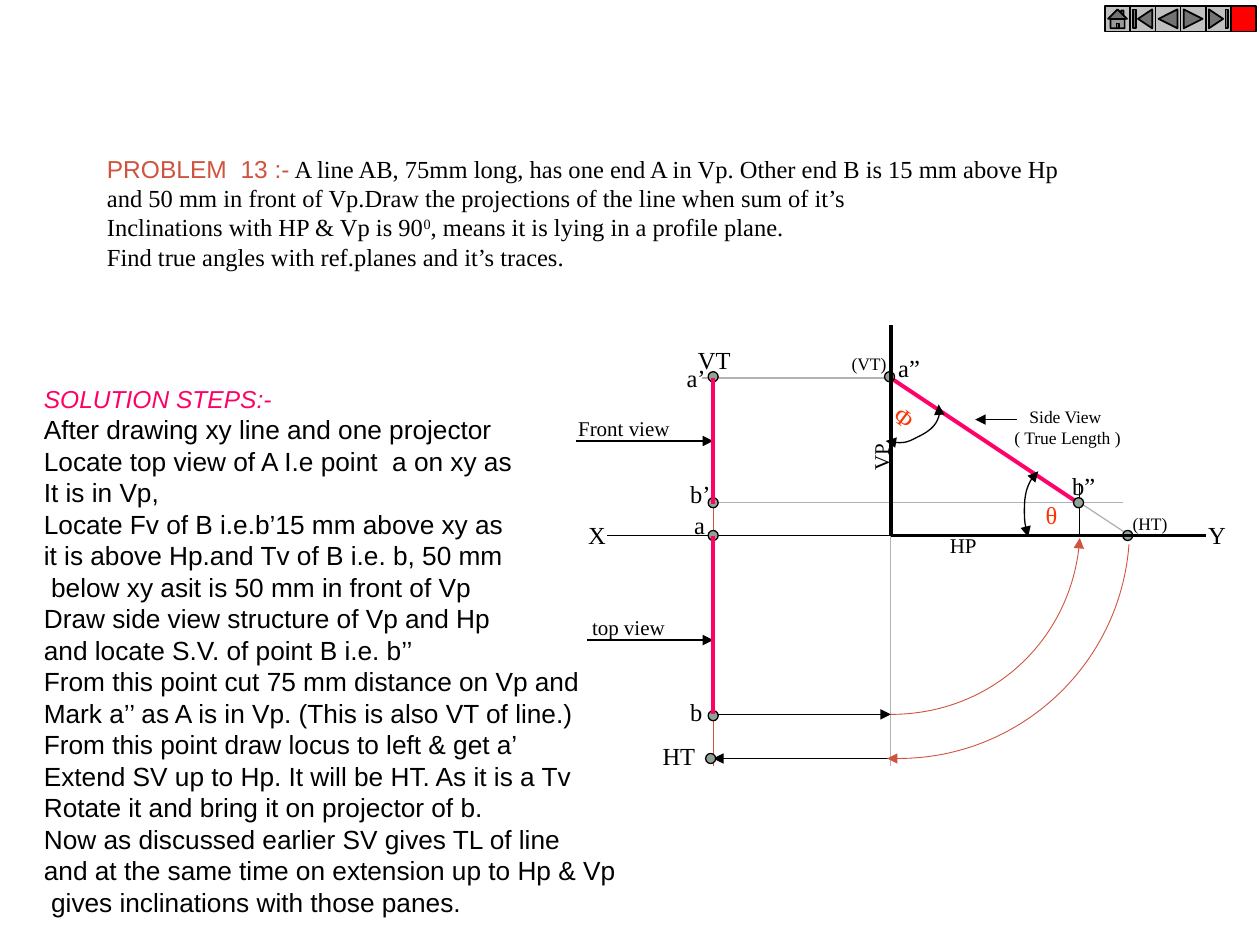
"""Build the slide on projecting a line that lies in a profile plane."""
from lxml import etree
from pptx import Presentation
from pptx.dml.color import RGBColor
from pptx.enum.shapes import MSO_CONNECTOR, MSO_SHAPE
from pptx.enum.text import MSO_AUTO_SIZE, PP_ALIGN
from pptx.oxml.ns import qn
from pptx.util import Inches, Pt

STRAIGHT = MSO_CONNECTOR.STRAIGHT
OVAL = MSO_SHAPE.OVAL
ROUNDED = MSO_SHAPE.ROUNDED_RECTANGLE
FIT = MSO_AUTO_SIZE.SHAPE_TO_FIT_TEXT
CENTER = PP_ALIGN.CENTER
BUTTONS = [
    MSO_SHAPE.ACTION_BUTTON_HOME,
    MSO_SHAPE.ACTION_BUTTON_BEGINNING,
    MSO_SHAPE.ACTION_BUTTON_BACK_OR_PREVIOUS,
    MSO_SHAPE.ACTION_BUTTON_FORWARD_OR_NEXT,
    MSO_SHAPE.ACTION_BUTTON_END,
    MSO_SHAPE.ACTION_BUTTON_CUSTOM,
]
SERIF, SANS = "Times New Roman", "Arial"
BLACK, GREY, RUST, PINK, ORANGE = "000000", "B2B2B2", "CF543F", "FF0066", "FF3300"
HEAD, TAIL = "a:headEnd", "a:tailEnd"
XY, FRONT, SIDE = 4.25, 5.66, 7.07

prs = Presentation()
prs.slide_width, prs.slide_height = Inches(10), Inches(7.5)
s = prs.slides.add_slide(prs.slide_layouts[6])


def add_text(x, y, w, h, paragraphs, size=14, color=BLACK, font=SERIF, align=None, rotation=0):
    """Add a text box; each paragraph is a string or a list of (text, format) runs."""
    sp = s.shapes.add_textbox(Inches(x), Inches(y), Inches(w), Inches(h))
    sp.rotation = rotation
    tf = sp.text_frame
    tf.word_wrap = False
    tf.auto_size = FIT
    for i, runs in enumerate(paragraphs):
        p = tf.add_paragraph() if i else tf.paragraphs[0]
        p.alignment = align
        for text, fmt in [(runs, {})] if isinstance(runs, str) else runs:
            r = p.add_run()
            r.text = text
            r.font.size = Pt(fmt.get("size", size))
            r.font.name = fmt.get("font", font)
            r.font.italic = fmt.get("italic", False)
            r.font.color.rgb = RGBColor.from_string(fmt.get("color", color))
            if "baseline" in fmt:
                r.font._element.set("baseline", str(fmt["baseline"]))


def draw(points, color=BLACK, width=0.75, arrows=()):
    """Draw a straight line through two points, or a chain of Bezier curves through more."""
    pts = [(Inches(x), Inches(y)) for x, y in points]
    if len(pts) == 2:
        sp = s.shapes.add_connector(STRAIGHT, *pts[0], *pts[1])
    else:
        fb = s.shapes.build_freeform(*pts[0])
        fb.add_line_segments(pts[1:], close=False)
        sp = fb.convert_to_shape()
        sp.fill.background()
        segments = list(sp._element.iter(qn("a:lnTo")))
        for i in range(0, len(segments), 3):
            curve = etree.SubElement(segments[i].getparent(), qn("a:cubicBezTo"))
            for segment in segments[i:i + 3]:
                curve.append(segment[0])
                segment.getparent().remove(segment)
    sp.line.color.rgb = RGBColor.from_string(color)
    sp.line.width = Pt(width)
    for end in arrows:
        etree.SubElement(sp.line._get_or_add_ln(), qn(end), type="triangle")
    etree.SubElement(sp._element.spPr, qn("a:effectLst"))


sp = s.shapes.add_shape(ROUNDED, Inches(0.1), Inches(0.11), Inches(9.8), Inches(7.29))
sp.adjustments[0] = 0.017
sp.shadow.inherit = False
sp.fill.solid()
sp.fill.fore_color.rgb = RGBColor.from_string("FFFFFF")
sp.line.fill.background()

add_text(0.75, 1.17, 7.88, 1.03, [
    [("PROBLEM  13 :-", {"font": SANS, "color": RUST}),
     (" A line AB, 75mm long, has one end A in Vp. Other end B is 15 mm above Hp", {})],
    "and 50 mm in front of Vp.Draw the projections of the line when sum of it’s",
    [("Inclinations with HP & Vp is 90", {}), ("0", {"baseline": 30000}),
     (", means it is lying in a profile plane.", {})],
    "Find true angles with ref.planes and it’s traces.",
])
add_text(0.25, 3, 4.74, 4.58, [
    [("SOLUTION STEPS:-", {"size": 14, "color": PINK, "italic": True})],
    "After drawing xy line and one projector",
    "Locate top view of A I.e point  a on xy as",
    "It is in Vp,",
    "Locate Fv of B i.e.b’15 mm above xy as",
    "it is above Hp.and Tv of B i.e. b, 50 mm",
    " below xy asit is 50 mm in front of Vp",
    "Draw side view structure of Vp and Hp",
    "and locate S.V. of point B i.e. b’’",
    "From this point cut 75 mm distance on Vp and",
    "Mark a’’ as A is in Vp. (This is also VT of line.)",
    "From this point draw locus to left & get a’",
    "Extend SV up to Hp. It will be HT. As it is a Tv",
    "Rotate it and bring it on projector of b.",
    "Now as discussed earlier SV gives TL of line",
    "and at the same time on extension up to Hp & Vp",
    " gives inclinations with those panes.",
], size=15, font=SANS)

draw([(FRONT, 3), (FRONT, 6.08)], RUST, 0.5)
for start, end in [
    ((SIDE, 2.58), (SIDE, 6.08)),
    ((FRONT, 3.99), (8.91, 3.99)),
    ((SIDE, 3), (5.57, 3)),
    ((8.48, 3.93), (8.98, 4.26)),
]:
    draw([start, end], GREY)
draw([(8.57, XY), (8.57, 3.83)])
draw([(4.82, XY), (9.57, XY)])
draw([(8.57, 4), (SIDE, 3)], PINK, 2.25)
for start, end in [
    ((FRONT, 5.67), (SIDE, 5.67)),
    ((SIDE, 6.02), (FRONT, 6.02)),
    ((8.07, 3.33), (7.74, 3.33)),
    ((4.57, 3.5), (FRONT, 3.5)),
    ((4.66, 5.08), (FRONT, 5.08)),
]:
    draw([start, end], arrows=[TAIL])

for x, y in [(5.62, 2.95), (5.62, 3.95), (5.62, 4.21), (5.62, 5.64), (5.6, 5.98),
             (7.02, 2.95), (8.52, 3.95), (8.91, 4.21)]:
    sp = s.shapes.add_shape(OVAL, Inches(x), Inches(y), Inches(0.08), Inches(0.08))
    sp.shadow.inherit = False
    sp.fill.solid()
    sp.fill.fore_color.rgb = RGBColor.from_string("93A299")
    sp.line.color.rgb = RGBColor.from_string(BLACK)
    sp.line.width = Pt(0.75)

for start, end, color in [
    ((FRONT, 3), (FRONT, 4), PINK),
    ((FRONT, XY), (FRONT, 5.67), PINK),
    ((SIDE, 2.58), (SIDE, XY), BLACK),
    ((SIDE, XY), (9.57, XY), BLACK),
]:
    draw([start, end], color, 2.25)

draw([(SIDE, 5.67), (7.86, 5.67), (8.52, 5.06), (8.57, 4.27)], RUST, 0.5, [TAIL])
draw([(7.04, 6.02), (7.07, 6.02), (7.1, 6.02), (7.13, 6.02),
      (8.09, 6.02), (8.89, 5.28), (8.96, 4.32)], RUST, 0.5, [HEAD])
draw([(8.24, 3.74), (8.17, 3.79), (8.13, 3.92), (8.13, 4.05),
      (8.13, 4.13), (8.14, 4.2), (8.16, 4.26)], arrows=[HEAD, TAIL])
draw([(7.45, 3.21), (7.49, 3.29), (7.41, 3.41), (7.28, 3.47),
      (7.19, 3.52), (7.1, 3.52), (7.03, 3.5)], arrows=[HEAD, TAIL])

for text, x, y, w in [
    ("VT", 5.44, 2.69, 0.46), ("a’", 5.35, 2.83, 0.35), ("b’", 5.38, 3.75, 0.36),
    ("a", 5.41, 4, 0.29), ("b", 5.38, 5.48, 0.3), ("HT", 5.16, 5.83, 0.51),
    ("X", 4.57, 4.08, 0.34), ("Y", 9.49, 4.08, 0.34),
    ("a”", 7.03, 2.75, 0.38), ("b”", 8.41, 3.69, 0.39),
]:
    add_text(x, y, w, 0.33, [text])
for text, x, y, w, rotation in [
    ("Front view", 4.49, 3.25, 0.93, 0), ("top view", 4.6, 4.83, 0.78, 0),
    ("HP", 7.44, 4.18, 0.41, 0), ("VP", 6.78, 3.47, 0.42, 270),
]:
    add_text(x, y, w, 0.3, [text], size=12, rotation=rotation)
add_text(6.66, 2.75, 0.48, 0.27, ["(VT)"], size=10)
add_text(8.89, 3.97, 0.53, 0.33, [[("(HT)", {"size": 10}), (" ", {})]])
add_text(7.91, 3.17, 1.09, 0.43, ["Side View", " ( True Length )"], size=10, align=CENTER)
add_text(8.2, 3.92, 0.3, 0.33, ["θ"], color=ORANGE)
add_text(7.01, 3.15, 0.35, 0.33, ["Φ"], color=ORANGE, rotation=36.9)

for i, button in enumerate(BUTTONS):
    sp = s.shapes.add_shape(button, Inches(8.77 + 0.2 * i), Inches(0.05), Inches(0.2), Inches(0.2))
    sp.shadow.inherit = False
    sp.fill.solid()
    sp.fill.fore_color.rgb = RGBColor.from_string("FF0000" if button == BUTTONS[-1] else "C0C0C0")
    sp.line.color.rgb = RGBColor.from_string(BLACK)
    sp.line.width = Pt(1)

prs.save("out.pptx")
